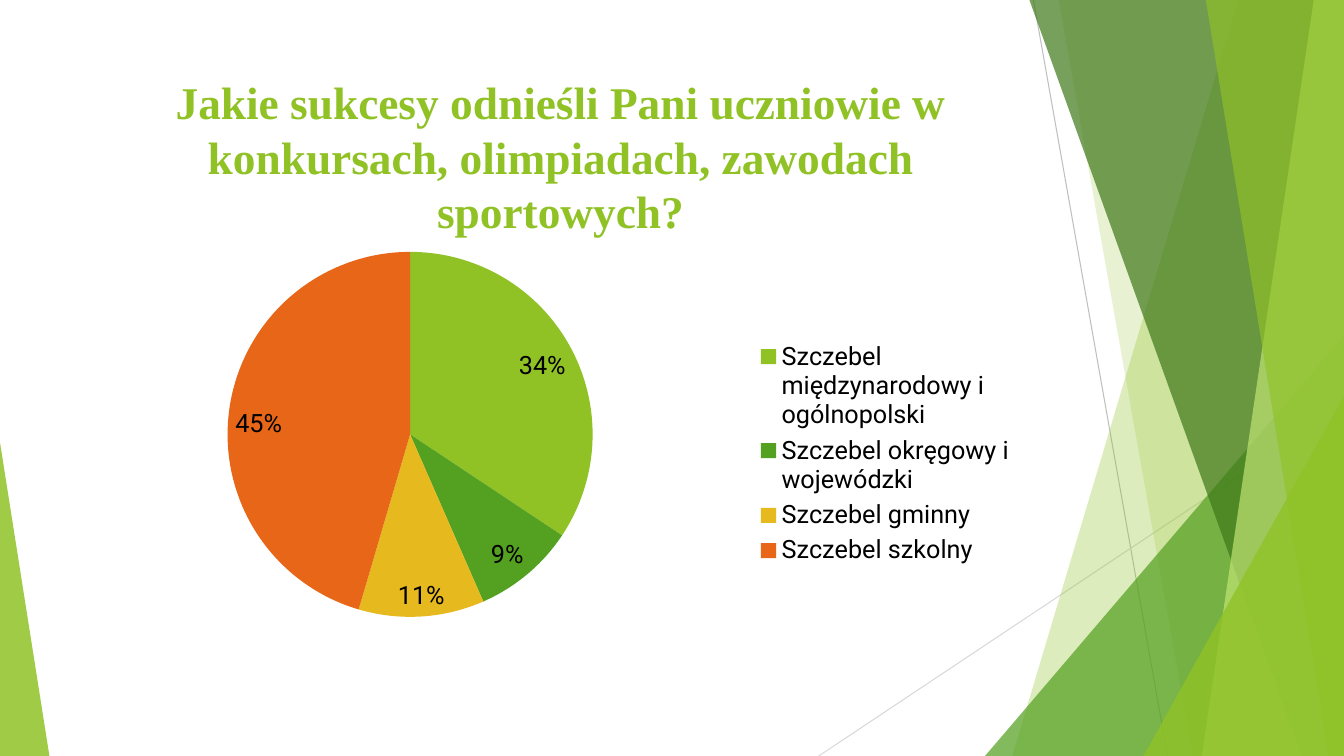
from lxml import etree
from pptx import Presentation
from pptx.chart.data import CategoryChartData
from pptx.dml.color import RGBColor
from pptx.enum.chart import XL_CHART_TYPE, XL_LABEL_POSITION, XL_LEGEND_POSITION
from pptx.enum.shapes import MSO_CONNECTOR, MSO_SHAPE
from pptx.enum.text import MSO_ANCHOR, MSO_AUTO_SIZE, PP_ALIGN
from pptx.oxml import parse_xml
from pptx.oxml.ns import nsdecls, qn
from pptx.util import Inches, Pt

PIE = XL_CHART_TYPE.PIE
INSIDE_END = XL_LABEL_POSITION.INSIDE_END
LEGEND_RIGHT = XL_LEGEND_POSITION.RIGHT
STRAIGHT = MSO_CONNECTOR.STRAIGHT
TRIANGLE = MSO_SHAPE.ISOSCELES_TRIANGLE
MIDDLE = MSO_ANCHOR.MIDDLE
CENTER = PP_ALIGN.CENTER

# Content
TITLE = "Jakie sukcesy odnieśli Pani uczniowie w konkursach, olimpiadach, zawodach sportowych?"
ANSWERS = [
    ("Szczebel międzynarodowy i ogólnopolski", 34, "lime"),
    ("Szczebel okręgowy i wojewódzki", 9, "green"),
    ("Szczebel gminny", 11, "yellow"),
    ("Szczebel szkolny", 45, "orange"),
]
COLORS = {
    "lime": "90C226", "green": "54A021", "yellow": "E6B91E", "orange": "E76618",
    "forest": "3F7819", "pale": "C0E474", "black": "000000",
    "gray": "BFBFBF", "light gray": "D9D9D9",
}
WIDTH, HEIGHT = 13.33, 7.5
TITLE_BOX = (0.74, 0.67, 9.64, 1.76)
CHART_BOX = (0.74, 2.36, 9.4, 4.24)
# Shares of the chart: left, top, width, height
PIE_AREA = (0.161, 0.033, 0.386, 0.854)
LEGEND_AREA = (0.715, 0.23, 0.28, 0.55)

# Decoration: lines run from point to point
LINES = [((10.25, 0), (11.58, HEIGHT), "gray"),
         ((WIDTH, 4.03), (8.12, HEIGHT), "light gray")]
# Bands reach the right edge: left x at the top, left x at the bottom, color, opacity
# Triangles stand on the bottom edge: left, top, width, apex share, color, opacity
DECORATION = [
    ("band", (12.28, 10.04), "lime", 30),
    ("band", (10.5, 11.83), "lime", 20),
    ("triangle", (9.77, 3.33, 3.56, 1), "green", 72),
    ("band", (10.21, 12.91), "forest", 70),
    ("band", (13.03, 11.92), "pale", 70),
    ("band", (11.96, 13.18), "lime", 65),
    ("triangle", (11.34, 3.93, 1.99, 1), "lime", 80),
    ("triangle", (0, 4.39, 0.49, 0), "lime", 85),
]


def color(name):
    return RGBColor.from_string(COLORS[name])


def inches(values):
    return [Inches(value) for value in values]


def add_line(slide, start, end, color_name):
    line = slide.shapes.add_connector(STRAIGHT, *inches(start + end))
    line.line.color.rgb = color(color_name)
    line.line.width = Pt(0.75)
    etree.SubElement(line._element.spPr, qn("a:effectLst"))


def add_band(slide, top_x, bottom_x):
    corners = [(top_x, 0), (WIDTH, 0), (WIDTH, HEIGHT), (bottom_x, HEIGHT)]
    points = [inches(corner) for corner in corners]
    builder = slide.shapes.build_freeform(*points[0])
    builder.add_line_segments(points[1:], close=True)
    return builder.convert_to_shape()


def add_triangle(slide, left, top, width, apex):
    box = inches((left, top, width, HEIGHT - top))
    shape = slide.shapes.add_shape(TRIANGLE, *box)
    shape.adjustments[0] = apex
    return shape


def paint(shape, color_name, opacity):
    shape.shadow.inherit = False
    shape.line.fill.background()
    shape.fill.solid()
    shape.fill.fore_color.rgb = color(color_name)
    fill_color = shape._element.spPr.find(qn("a:solidFill"))[0]
    etree.SubElement(fill_color, qn("a:alpha"), val=str(opacity * 1000))


def layout_xml(area, inner=False):
    left, top, width, height = area
    target = '<c:layoutTarget val="inner"/>' if inner else ""
    return parse_xml(
        f'<c:layout {nsdecls("c")}><c:manualLayout>{target}'
        '<c:xMode val="edge"/><c:yMode val="edge"/>'
        f'<c:x val="{left}"/><c:y val="{top}"/><c:w val="{width}"/><c:h val="{height}"/>'
        '</c:manualLayout></c:layout>')


def add_title(slide):
    title = slide.shapes.title
    title.left, title.top, title.width, title.height = inches(TITLE_BOX)
    frame = title.text_frame
    frame.text = TITLE
    frame.word_wrap = True
    frame.auto_size = MSO_AUTO_SIZE.NONE
    frame.vertical_anchor = MIDDLE
    paragraph = frame.paragraphs[0]
    paragraph.alignment = CENTER
    font = paragraph.runs[0].font
    font.name, font.size, font.bold = "Times New Roman", Pt(32.4), True
    font.color.rgb = color("lime")


def add_pie(slide):
    data = CategoryChartData()
    data.categories = [label for label, _, _ in ANSWERS]
    data.add_series("Series 1", [value for _, value, _ in ANSWERS])
    chart = slide.shapes.add_chart(PIE, *inches(CHART_BOX), data).chart
    chart.has_title = False
    chart.font.name, chart.font.size = "Roboto", Pt(18)
    chart.font.color.rgb = color("black")

    plot = chart.plots[0]
    plot.vary_by_categories = True
    for index, (_, _, color_name) in enumerate(ANSWERS):
        fill = plot.series[0].points[index].format.fill
        fill.solid()
        fill.fore_color.rgb = color(color_name)

    plot.has_data_labels = True
    labels = plot.data_labels
    labels.show_percentage, labels.show_value = True, False
    labels.number_format, labels.number_format_is_linked = "0%", False
    labels.position = INSIDE_END

    chart.has_legend = True
    chart.legend.position = LEGEND_RIGHT
    chart.legend.include_in_layout = False

    # Fixed places for the pie and its legend
    plot_area = chart._chartSpace.chart.plotArea
    for old_layout in plot_area.findall(qn("c:layout")):
        plot_area.remove(old_layout)
    plot_area.insert(0, layout_xml(PIE_AREA, inner=True))
    legend = chart.legend._element
    for old_layout in legend.findall(qn("c:layout")):
        legend.remove(old_layout)
    legend.find(qn("c:legendPos")).addnext(layout_xml(LEGEND_AREA))


def main():
    presentation = Presentation()
    presentation.slide_width, presentation.slide_height = inches((WIDTH, HEIGHT))
    slide = presentation.slides.add_slide(presentation.slide_layouts[5])
    for start, end, color_name in LINES:
        add_line(slide, start, end, color_name)
    builders = {"band": add_band, "triangle": add_triangle}
    for kind, geometry, color_name, opacity in DECORATION:
        paint(builders[kind](slide, *geometry), color_name, opacity)
    add_title(slide)
    add_pie(slide)
    presentation.save("out.pptx")


if __name__ == "__main__":
    main()
